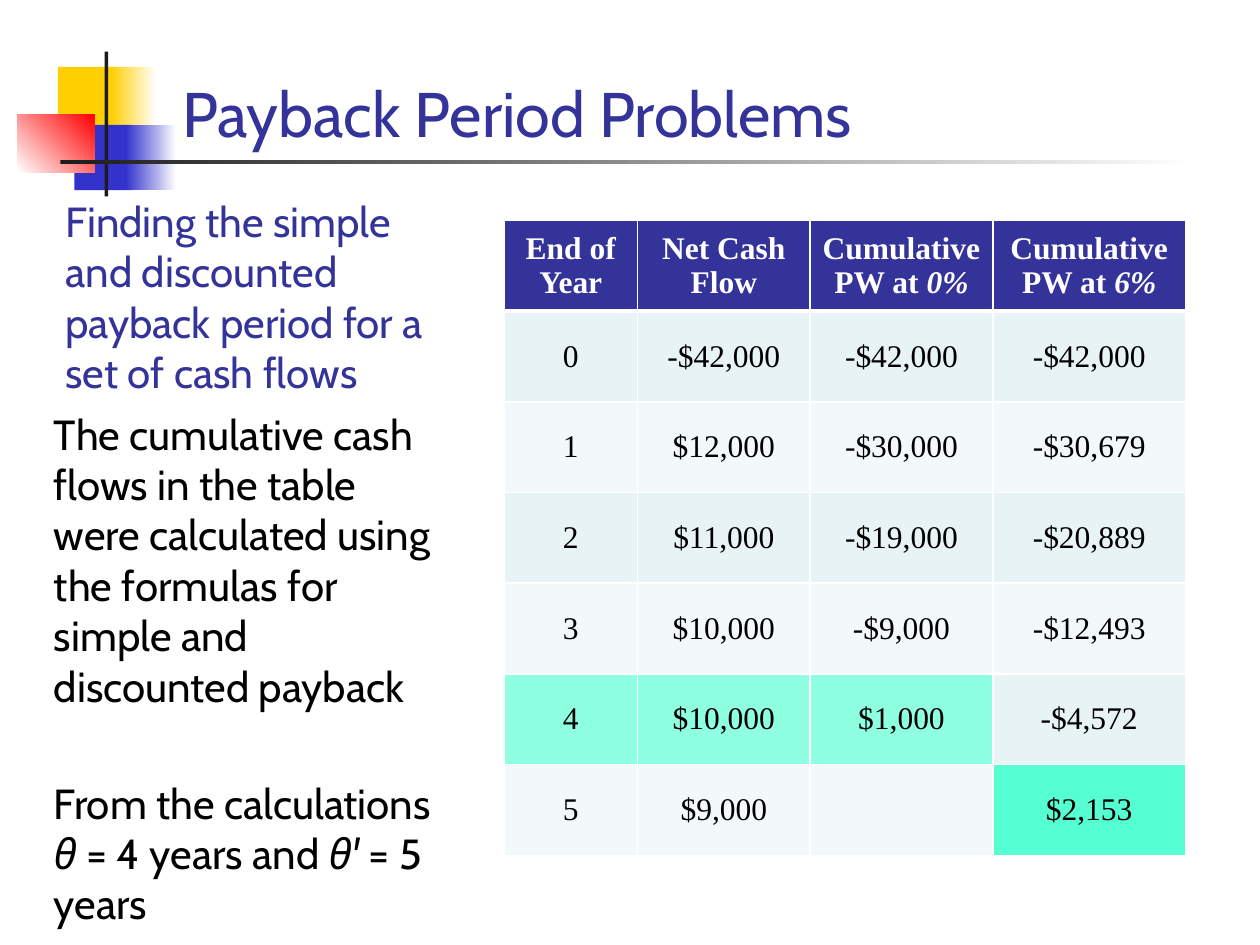
from dataclasses import dataclass

from lxml.etree import SubElement
from pptx import Presentation
from pptx.dml.color import RGBColor
from pptx.enum.shapes import MSO_SHAPE as Preset
from pptx.enum.text import MSO_ANCHOR as Anchor, MSO_AUTO_SIZE as AutoSize, PP_ALIGN as Align
from pptx.oxml.ns import qn
from pptx.util import Inches, Pt


@dataclass(frozen=True)
class Theme:
    text_font: str = "Cabin"
    table_font: str = "Times New Roman"
    heading_size: int = 36
    text_size: int = 24
    table_size: int = 18
    navy: str = "333399"
    black: str = "000000"
    white: str = "FFFFFF"
    yellow: str = "FFCF01"
    blue: str = "3333CC"
    red: str = "FF0000"
    charcoal: str = "1C1C1C"
    bands: tuple = ("E7F3F4", "F3F9FA")
    simple_payback: str = "8EFFE1"
    discounted_payback: str = "56FFD2"


def color(value):
    return RGBColor.from_string(value)


def add_span(para, text, *, font, size, ink, bold=False, italic=False):
    span = para.add_run()
    span.text = text
    span.font.name = font
    span.font.size = Pt(size)
    span.font.bold = bold
    span.font.italic = italic
    span.font.color.rgb = color(ink)


def set_border(cell, widths, ink):
    props = cell._tc.get_or_add_tcPr()
    for index, (side, width) in enumerate(widths.items()):
        line = SubElement(props, qn(f"a:ln{side}"), w=str(Pt(width)))
        fill = SubElement(line, qn("a:solidFill"))
        SubElement(fill, qn("a:srgbClr"), val=ink)
        props.insert(index, line)


class PageBuilder:
    def __init__(self, page, theme):
        self.page = page
        self.theme = theme

    def bar(self, left, top, width, height, start, end=None, angle=0):
        box = self.page.shapes.add_shape(
            Preset.RECTANGLE, Inches(left), Inches(top), Inches(width), Inches(height))
        box.shadow.inherit = False
        box.line.fill.background()
        if end is None:
            box.fill.solid()
            box.fill.fore_color.rgb = color(start)
            return
        box.fill.gradient()
        box.fill.gradient_angle = angle
        for stop, position, ink in zip(box.fill.gradient_stops, (0, 1), (start, end)):
            stop.position = position
            stop.color.rgb = color(ink)

    def fill_frame(self, frame, paragraphs, size, ink, anchor, gap=0):
        frame.word_wrap = True
        frame.auto_size = AutoSize.NONE
        frame.vertical_anchor = anchor
        for index, spans in enumerate(paragraphs):
            para = frame.add_paragraph() if index else frame.paragraphs[0]
            para.alignment = Align.LEFT
            para.space_before = Pt(gap if index else 0)
            for text, italic in spans:
                add_span(para, text, font=self.theme.text_font, size=size,
                         ink=ink, italic=italic)

    def title(self, text, left, top, width, height):
        box = self.page.shapes.title
        box.left, box.top = Inches(left), Inches(top)
        box.width, box.height = Inches(width), Inches(height)
        self.fill_frame(box.text_frame, [[(text, False)]], self.theme.text_size,
                        self.theme.navy, Anchor.BOTTOM)

    def text(self, paragraphs, left, top, width, height, *, size, ink,
             anchor=Anchor.TOP, gap=0):
        box = self.page.shapes.add_textbox(
            Inches(left), Inches(top), Inches(width), Inches(height))
        self.fill_frame(box.text_frame, paragraphs, size, ink, anchor, gap)

    def table(self, rows, left, top, widths, row_height, highlights):
        theme = self.theme
        grid = self.page.shapes.add_table(
            len(rows), len(widths), Inches(left), Inches(top),
            Inches(sum(widths)), Inches(row_height * len(rows))).table
        for column, width in zip(grid.columns, widths):
            column.width = Inches(width)
        for row_index, row in enumerate(rows):
            grid.rows[row_index].height = Inches(row_height)
            header = row_index == 0
            band = theme.navy if header else theme.bands[(row_index - 1) % 2]
            for column_index, spans in enumerate(row):
                cell = grid.cell(row_index, column_index)
                cell.fill.solid()
                cell.fill.fore_color.rgb = color(
                    highlights.get((row_index, column_index), band))
                cell.vertical_anchor = Anchor.MIDDLE
                set_border(cell, {"L": 1, "R": 1, "T": 3 if row_index == 1 else 1,
                                  "B": 3 if header else 1}, theme.white)
                para = cell.text_frame.paragraphs[0]
                para.alignment = Align.CENTER
                for text, italic in spans:
                    add_span(para, text, font=theme.table_font, size=theme.table_size,
                             ink=theme.white if header else theme.black,
                             bold=header, italic=italic)


def main():
    theme = Theme()
    deck = Presentation()
    deck.slide_width, deck.slide_height = Inches(10), Inches(7.5)
    page = deck.slides.add_slide(deck.slide_layouts[5])
    builder = PageBuilder(page, theme)

    builder.bar(0.46, 0.53, 0.48, 0.52, theme.yellow)
    builder.bar(0.88, 0.53, 0.36, 0.52, theme.yellow, theme.white)
    builder.bar(0.59, 0.99, 0.46, 0.52, theme.blue)
    builder.bar(1, 0.99, 0.4, 0.52, theme.blue, theme.white)
    builder.bar(0.14, 0.91, 0.61, 0.46, theme.white, theme.red, angle=45)
    builder.bar(0.83, 0.41, 0.03, 1.15, theme.charcoal)
    builder.bar(0.48, 1.27, 9, 0.03, theme.charcoal, theme.white)

    builder.title("Finding the simple and discounted payback period for a set of cash flows",
                  0.42, 1.67, 3.29, 1.53)

    header = [
        [("End of Year", False)],
        [("Net Cash Flow", False)],
        [("Cumulative PW at ", False), ("0%", True)],
        [("Cumulative PW at ", False), ("6%", True)],
    ]
    cash_flows = [
        ("0", "-$42,000", "-$42,000", "-$42,000"),
        ("1", "$12,000", "-$30,000", "-$30,679"),
        ("2", "$11,000", "-$19,000", "-$20,889"),
        ("3", "$10,000", "-$9,000", "-$12,493"),
        ("4", "$10,000", "$1,000", "-$4,572"),
        ("5", "$9,000", "", "$2,153"),
    ]
    rows = [header] + [[[(text, False)] if text else [] for text in row]
                       for row in cash_flows]
    highlights = {(5, column): theme.simple_payback for column in range(3)}
    highlights[6, 3] = theme.discounted_payback
    builder.table(rows, 4, 1.75, (1.06, 1.37, 1.45, 1.53), 0.72, highlights)

    builder.text([
        [("The cumulative cash flows in the table were calculated using "
          "the formulas for simple and discounted payback", False)],
        [("From the calculations ", False), ("θ", True), (" = 4 years and ", False),
         ("θ'", True), (" = 5 years", False)],
    ], 0.33, 3.19, 3.29, 4.28, size=theme.text_size, ink=theme.black, gap=38)
    builder.text([[("Payback Period Problems", False)]], 1.35, 0.32, 6.92, 0.92,
                 size=theme.heading_size, ink=theme.navy, anchor=Anchor.BOTTOM)

    deck.save("out.pptx")


if __name__ == "__main__":
    main()
